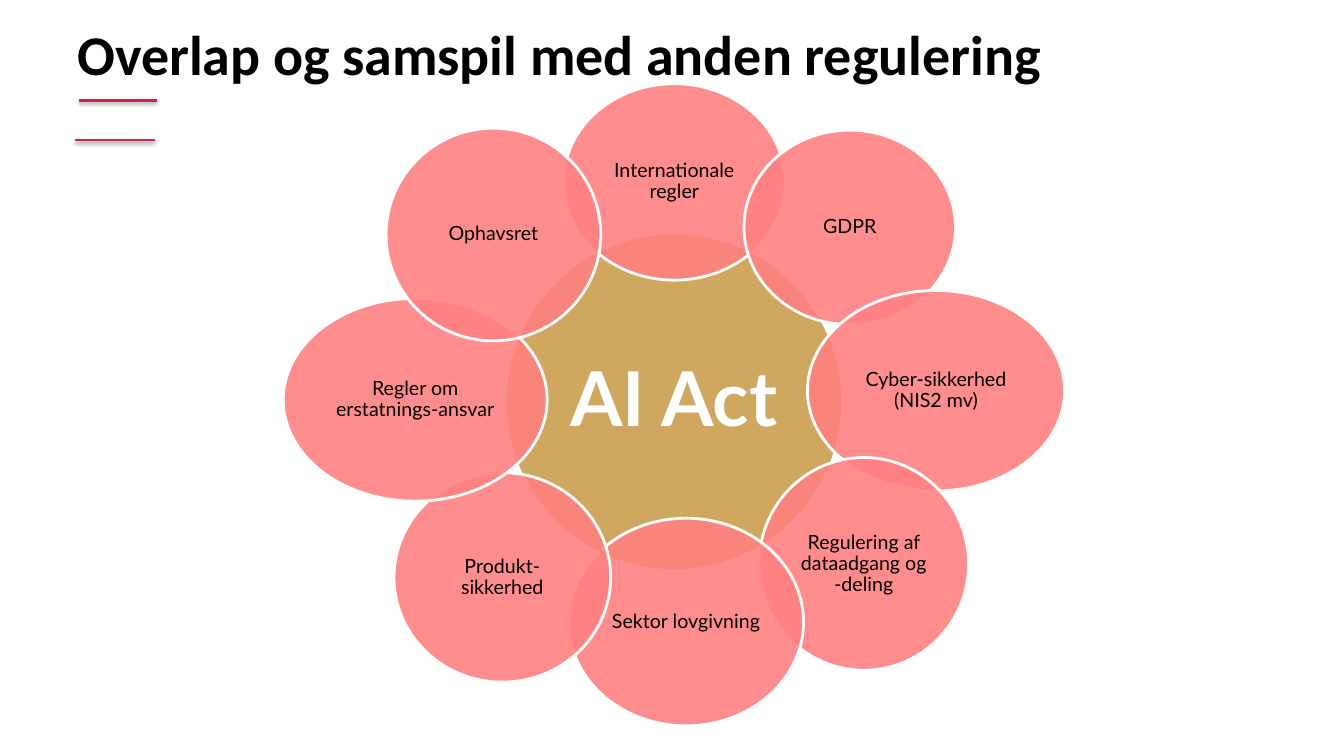
from lxml import etree
from pptx import Presentation
from pptx.dml.color import RGBColor
from pptx.enum.shapes import MSO_CONNECTOR, MSO_SHAPE
from pptx.enum.text import MSO_ANCHOR, PP_ALIGN
from pptx.oxml import parse_xml
from pptx.oxml.ns import nsdecls, qn
from pptx.util import Cm, Pt

STRAIGHT = MSO_CONNECTOR.STRAIGHT
OVAL = MSO_SHAPE.OVAL
MIDDLE = MSO_ANCHOR.MIDDLE
CENTER = PP_ALIGN.CENTER

PETALS = [
    ("Internationale regler", 7.06, 0, 5.59, 4.95),
    ("GDPR", 11.61, 1.17, 5.33, 4.9),
    ("Cyber-sikkerhed (NIS2 mv)", 13.21, 5.21, 6.48, 5.05),
    ("Regulering af dataadgang og -deling", 11.99, 9.42, 5.28, 5.36),
    ("Sektor lovgivning", 7.19, 10.95, 5.92, 5.23),
    ("Produkt-sikkerhed", 2.79, 9.8, 5.46, 5.28),
    ("Regler om erstatnings-ansvar", 0, 5.41, 6.65, 5.11),
    ("Ophavsret", 2.59, 1.12, 5.41, 5.36),
]


def color(value):
    return RGBColor.from_string(value)


def style_paragraph(paragraph, font_name, size, value, bold=False):
    paragraph.font.name = font_name
    paragraph.font.size = Pt(size)
    paragraph.font.bold = bold
    paragraph.font.color.rgb = color(value)


def add_title(slide, left, top, width, height, text):
    box = slide.shapes.add_textbox(Cm(left), Cm(top), Cm(width), Cm(height))
    frame = box.text_frame
    frame.word_wrap = True
    frame.vertical_anchor = MIDDLE
    frame.text = text
    style_paragraph(frame.paragraphs[0], "Calibri", 40, "000000", True)


def add_accent(slide, left, top, width, value):
    line = slide.shapes.add_connector(
        STRAIGHT, Cm(left), Cm(top), Cm(left + width), Cm(top))
    line.line.color.rgb = color(value)
    line.line.width = Pt(2)
    line._element.spPr.append(parse_xml(
        f'<a:effectLst {nsdecls("a")}>'
        f'<a:outerShdw blurRad="{Pt(3.1)}" dist="{Pt(1.6)}" dir="5400000" rotWithShape="0">'
        '<a:srgbClr val="000000"><a:alpha val="38000"/></a:srgbClr>'
        '</a:outerShdw></a:effectLst>'))


def add_circle(slide, left, top, width, height, text, fill, size, value,
               inset, bold=False, opacity=100):
    circle = slide.shapes.add_shape(OVAL, Cm(left), Cm(top), Cm(width), Cm(height))
    circle.shadow.inherit = False
    circle.fill.solid()
    circle.fill.fore_color.rgb = color(fill)
    if opacity < 100:
        fill_color = circle._element.spPr.find(qn("a:solidFill"))[0]
        etree.SubElement(fill_color, qn("a:alpha"), val=str(opacity * 1000))
    circle.line.color.rgb = color("FFFFFF")
    circle.line.width = Pt(2)
    frame = circle.text_frame
    frame.word_wrap = True
    frame.vertical_anchor = MIDDLE
    frame.margin_left = frame.margin_right = Cm(inset)
    frame.margin_top = frame.margin_bottom = Cm(inset)
    frame.text = text
    paragraph = frame.paragraphs[0]
    paragraph.alignment = CENTER
    paragraph.line_spacing = 0.9
    style_paragraph(paragraph, "Lato", size, value, bold)


def add_flower(slide, left, top):
    add_circle(slide, left + 5.59, top + 3.76, 8.51, 8.51, "AI Act",
               "D0A75F", 54, "FFFFFF", 0.18, bold=True)
    for text, across, down, width, height in PETALS:
        add_circle(slide, left + across, top + down, width, height, text,
                   "FF8080", 14, "000000", 0.05, opacity=89)


def main():
    presentation = Presentation()
    presentation.slide_width = Cm(33.87)
    presentation.slide_height = Cm(19.05)
    slide = presentation.slides.add_slide(presentation.slide_layouts[6])
    add_accent(slide, 1.9, 3.53, 2, "D02448")
    add_title(slide, 1.7, -0.25, 30.48, 3.18, "Overlap og samspil med anden regulering")
    add_accent(slide, 2, 2.53, 1.95, "D51E48")
    add_flower(slide, 7.14, 2.11)
    presentation.save("out.pptx")


if __name__ == "__main__":
    main()
